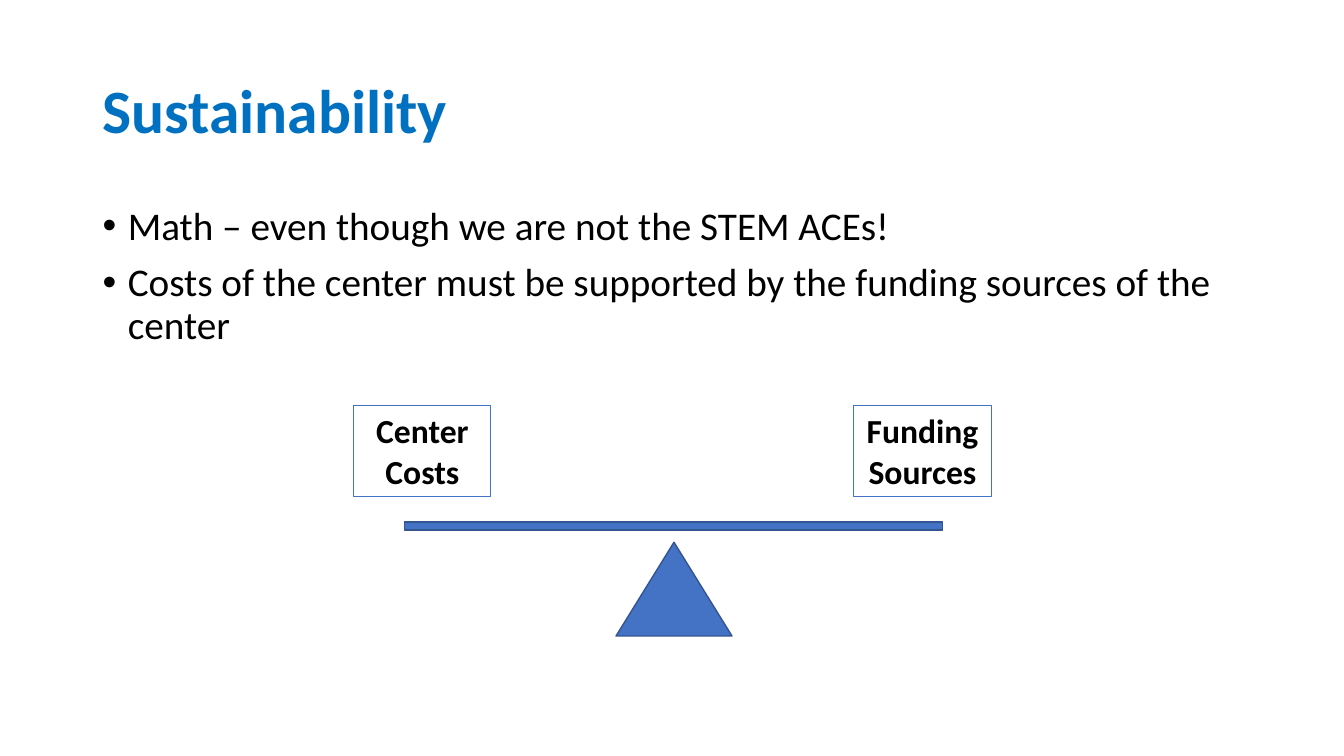
from lxml import etree
from pptx import Presentation
from pptx import util as u
from pptx.dml.color import RGBColor
from pptx.enum import shapes, text
from pptx.oxml.ns import qn

TITLE_BLUE = RGBColor(0x00, 0x70, 0xC0)
FILL_BLUE = RGBColor(0x44, 0x72, 0xC4)
EDGE_BLUE = RGBColor(0x32, 0x54, 0x91)
BLACK = RGBColor(0, 0, 0)
PX = 9144


class SlideBuilder:
    font = "Calibri"

    def __init__(self, slide):
        self.slide = slide
        self.target = slide.shapes

    def start_group(self):
        self.target = self.slide.shapes.add_group_shape().shapes

    def set_text(self, frame, lines, size=28, color=BLACK, bold=False,
                 align=text.PP_ALIGN.LEFT, anchor=text.MSO_ANCHOR.TOP,
                 line_spacing=1.0, before=0, bullet=None):
        frame.word_wrap = True
        frame.vertical_anchor = anchor
        for index, line in enumerate(lines):
            paragraph = frame.add_paragraph() if index else frame.paragraphs[0]
            paragraph.alignment = align
            paragraph.line_spacing = line_spacing
            paragraph.space_before = u.Pt(before)
            if bullet:
                self.add_bullet(paragraph, bullet)
            run = paragraph.add_run()
            run.text = line
            run.font.name = self.font
            run.font.size = u.Pt(size)
            run.font.bold = bold
            run.font.color.rgb = color

    def add_bullet(self, paragraph, mark):
        properties = paragraph._p.get_or_add_pPr()
        properties.set("marL", str(25 * PX))
        properties.set("indent", str(-25 * PX))
        etree.SubElement(properties, qn("a:buFont")).set("typeface", "Arial")
        etree.SubElement(properties, qn("a:buChar")).set("char", mark)

    def text_box(self, left, top, width, height, lines, **style):
        box = self.target.add_textbox(left * PX, top * PX, width * PX, height * PX)
        self.set_text(box.text_frame, lines, **style)

    def shape(self, kind, left, top, width, height, fill=None, line=EDGE_BLUE, weight=1):
        drawn = self.target.add_shape(kind, left * PX, top * PX, width * PX, height * PX)
        drawn.shadow.inherit = False
        if fill is None:
            drawn.fill.background()
        else:
            drawn.fill.solid()
            drawn.fill.fore_color.rgb = fill
        drawn.line.color.rgb = line
        drawn.line.width = u.Pt(weight)
        return drawn

    def weight_label(self, left, label):
        weight = self.shape(shapes.MSO_SHAPE.RECTANGLE, left, 402, 136, 91,
                            line=FILL_BLUE, weight=0.75)
        self.set_text(weight.text_frame, [label], size=24, bold=True,
                      align=text.PP_ALIGN.CENTER)


def main():
    deck = Presentation()
    deck.slide_width = u.Inches(13.33)
    deck.slide_height = u.Inches(7.5)
    page = SlideBuilder(deck.slides.add_slide(deck.slide_layouts[6]))

    page.text_box(92, 40, 1150, 145, ["Sustainability"], size=44, color=TITLE_BLUE,
                  bold=True, anchor=text.MSO_ANCHOR.MIDDLE, line_spacing=0.9)
    page.text_box(92, 200, 1150, 476, [
        "Math – even though we are not the STEM ACEs!",
        "Costs of the center must be supported by the funding sources of the center",
    ], line_spacing=0.9, before=10, bullet="•")

    page.start_group()
    page.shape(shapes.MSO_SHAPE.ISOSCELES_TRIANGLE, 611, 538, 115, 93, fill=FILL_BLUE)
    page.shape(shapes.MSO_SHAPE.RECTANGLE, 401, 518, 534, 8, fill=FILL_BLUE)
    for left, label in ((351, "Center Costs"), (847, "Funding Sources")):
        page.weight_label(left, label)

    deck.save("out.pptx")


if __name__ == "__main__":
    main()
